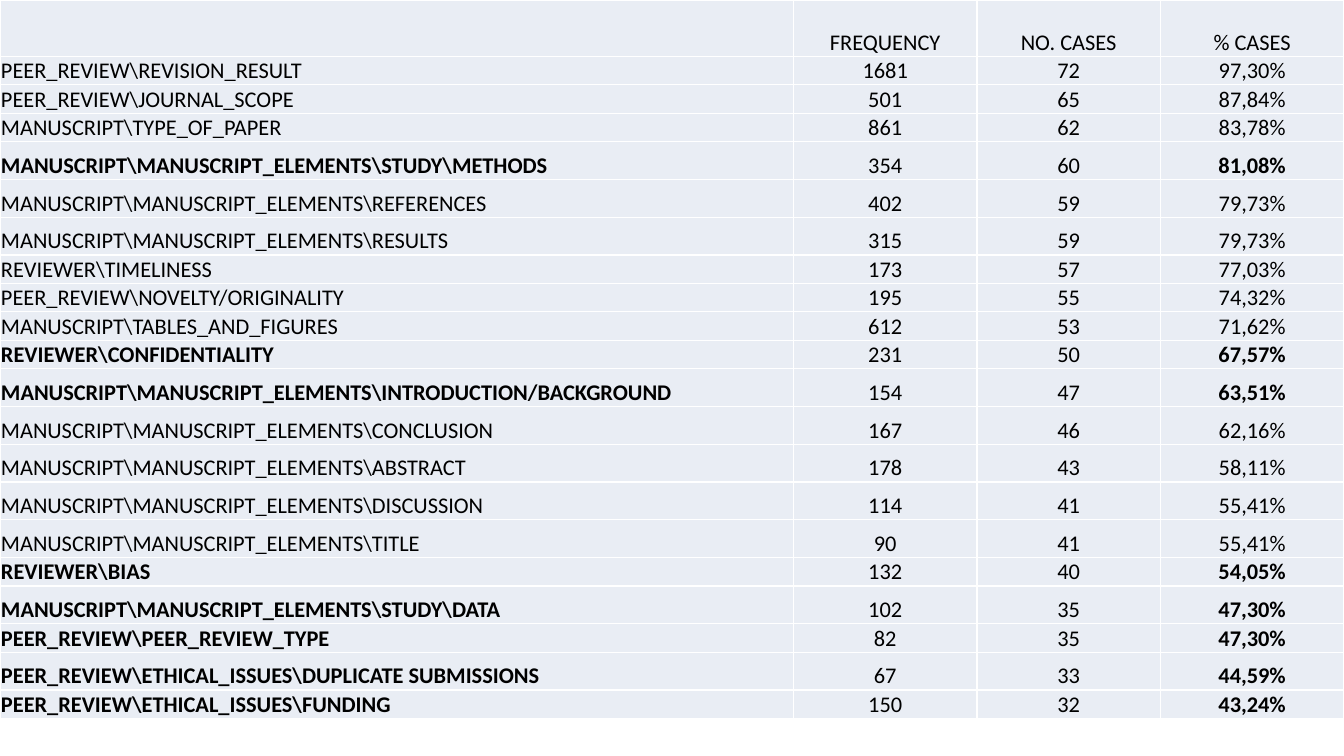
from lxml import etree
from pptx import Presentation
from pptx import util as u
from pptx.dml.color import RGBColor
from pptx.enum import text
from pptx.oxml import ns

PALE = RGBColor(0xE9, 0xED, 0xF4)
BLACK = RGBColor(0x00, 0x00, 0x00)
WHITE = RGBColor(0xFF, 0xFF, 0xFF)

# Slide
deck = Presentation()
deck.slide_width, deck.slide_height = u.Inches(13.33), u.Inches(7.5)
slide = deck.slides.add_slide(deck.slide_layouts[6])

# Content: code, frequency, number of cases, share of cases, emphasised
HEADER = ("", "FREQUENCY", "NO. CASES", "% CASES", False)
CODES = [
    (r"PEER_REVIEW\REVISION_RESULT", "1681", "72", "97,30%", False),
    (r"PEER_REVIEW\JOURNAL_SCOPE", "501", "65", "87,84%", False),
    (r"MANUSCRIPT\TYPE_OF_PAPER", "861", "62", "83,78%", False),
    (r"MANUSCRIPT\MANUSCRIPT_ELEMENTS\STUDY\METHODS", "354", "60", "81,08%", True),
    (r"MANUSCRIPT\MANUSCRIPT_ELEMENTS\REFERENCES", "402", "59", "79,73%", False),
    (r"MANUSCRIPT\MANUSCRIPT_ELEMENTS\RESULTS", "315", "59", "79,73%", False),
    (r"REVIEWER\TIMELINESS", "173", "57", "77,03%", False),
    (r"PEER_REVIEW\NOVELTY/ORIGINALITY", "195", "55", "74,32%", False),
    (r"MANUSCRIPT\TABLES_AND_FIGURES", "612", "53", "71,62%", False),
    (r"REVIEWER\CONFIDENTIALITY", "231", "50", "67,57%", True),
    (r"MANUSCRIPT\MANUSCRIPT_ELEMENTS\INTRODUCTION/BACKGROUND", "154", "47", "63,51%", True),
    (r"MANUSCRIPT\MANUSCRIPT_ELEMENTS\CONCLUSION", "167", "46", "62,16%", False),
    (r"MANUSCRIPT\MANUSCRIPT_ELEMENTS\ABSTRACT", "178", "43", "58,11%", False),
    (r"MANUSCRIPT\MANUSCRIPT_ELEMENTS\DISCUSSION", "114", "41", "55,41%", False),
    (r"MANUSCRIPT\MANUSCRIPT_ELEMENTS\TITLE", "90", "41", "55,41%", False),
    (r"REVIEWER\BIAS", "132", "40", "54,05%", True),
    (r"MANUSCRIPT\MANUSCRIPT_ELEMENTS\STUDY\DATA", "102", "35", "47,30%", True),
    (r"PEER_REVIEW\PEER_REVIEW_TYPE", "82", "35", "47,30%", True),
    (r"PEER_REVIEW\ETHICAL_ISSUES\DUPLICATE SUBMISSIONS", "67", "33", "44,59%", True),
    (r"PEER_REVIEW\ETHICAL_ISSUES\FUNDING", "150", "32", "43,24%", True),
]
records = [HEADER] + CODES

# Grid: one wide code column and three equal figure columns
HEADER_ROW, SHORT_ROW, TALL_ROW = u.Inches(0.56), u.Inches(0.28), deck.slide_height // 20
LONGEST_SHORT_CODE = 35
FIGURE_COLUMN = u.Inches(1.82)
code_column = deck.slide_width - 3 * FIGURE_COLUMN

frequencies = slide.shapes.add_table(
    len(records), 4, 0, 0, deck.slide_width, deck.slide_height).table
frequencies.first_row = frequencies.horz_banding = False
for column, width in zip(frequencies.columns, [code_column] + [FIGURE_COLUMN] * 3):
    column.width = width

CELL_FORMAT = {
    "margin_left": u.Inches(0.01),
    "margin_right": u.Inches(0.01),
    "margin_top": u.Inches(0.01),
    "margin_bottom": 0,
    "vertical_anchor": text.MSO_ANCHOR.BOTTOM,
}
FONT_FORMAT = {"name": "Calibri", "size": u.Pt(16)}


def add_borders(cell):
    properties = cell._tc.get_or_add_tcPr()
    for side in ("lnL", "lnR", "lnT", "lnB"):
        line = etree.SubElement(properties, ns.qn(f"a:{side}"), w=str(u.Pt(1)))
        fill = etree.SubElement(line, ns.qn("a:solidFill"))
        etree.SubElement(fill, ns.qn("a:srgbClr"), val=str(WHITE))


# Cells
for row, (*values, emphasised) in enumerate(records):
    code_row = TALL_ROW if len(values[0]) > LONGEST_SHORT_CODE else SHORT_ROW
    frequencies.rows[row].height = code_row if row else HEADER_ROW
    for col, value in enumerate(values):
        cell = frequencies.cell(row, col)
        for key, setting in CELL_FORMAT.items():
            setattr(cell, key, setting)
        add_borders(cell)
        cell.fill.solid()
        cell.fill.fore_color.rgb = PALE
        if not value:
            continue
        cell.text = value
        entry = cell.text_frame.paragraphs[0]
        entry.alignment = text.PP_ALIGN.CENTER if col else text.PP_ALIGN.LEFT
        font = entry.runs[0].font
        for key, setting in FONT_FORMAT.items():
            setattr(font, key, setting)
        font.bold = emphasised and col in (0, 3)
        font.color.rgb = BLACK

deck.save("out.pptx")
